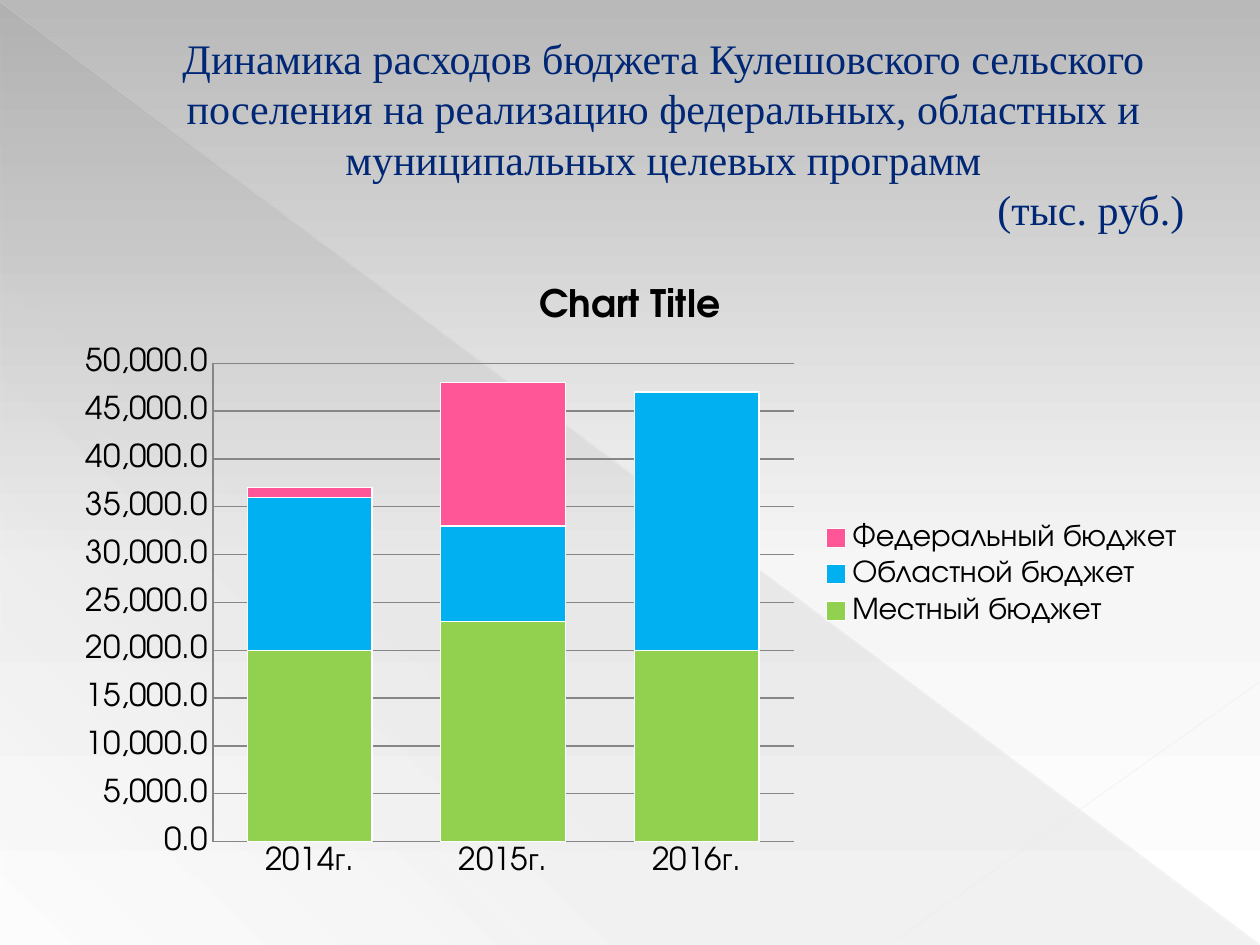
from lxml.etree import SubElement
from pptx import Presentation
from pptx.chart.data import CategoryChartData
from pptx.dml.color import RGBColor
from pptx.enum.chart import XL_CHART_TYPE as ChartType, XL_LEGEND_POSITION as LegendPosition
from pptx.enum.chart import XL_TICK_MARK as TickMark
from pptx.enum.shapes import MSO_CONNECTOR as Connector, MSO_SHAPE as Shape
from pptx.enum.text import MSO_ANCHOR as Anchor, PP_ALIGN as Align
from pptx.oxml.ns import qn
from pptx.util import Cm, Pt

# Content
TITLE = [
    ("Динамика расходов бюджета Кулешовского сельского поселения "
     "на реализацию федеральных, областных и муниципальных целевых программ", Align.CENTER),
    ("(тыс. руб.)", Align.RIGHT),
]
CHART_TITLE = "Chart Title"
YEARS = ["2014г.", "2015г.", "2016г."]
BUDGETS = [
    ("Местный бюджет", (20000, 23000, 20000), RGBColor(0x92, 0xD0, 0x50)),
    ("Областной бюджет", (16000, 10000, 27000), RGBColor(0x00, 0xB0, 0xF0)),
    ("Федеральный бюджет", (1000, 15000, 0), RGBColor(0xFF, 0x56, 0x98)),
]

# Style
NAVY = RGBColor(0x00, 0x27, 0x76)
BLACK = RGBColor(0, 0, 0)
WHITE = RGBColor(0xFF, 0xFF, 0xFF)
GRID_GRAY = RGBColor(0x86, 0x86, 0x86)
TITLE_FONT, CHART_FONT = "Times New Roman", "TeX Gyre Adventor"

# Gradient stops: position %, colour, opacity %
BACKGROUND_STOPS = [(0, "B9B9B9", 100), (60, "F6F6F6", 100), (100, "FFFFFF", 100)]
TRIANGLE_STOPS = [(0, "666666", 10), (70, "666666", 8), (100, "666666", 1)]
# Decorative lines: start, end, colour, width, opacity %
LINES = [
    ((0, 0.03), (25.37, 19.02), RGBColor(0xE8, 0xE8, 0xE8), 0.39, 35),
    ((25.4, 13.74), (17.96, 19.02), RGBColor(0xEA, 0xEA, 0xEA), 0.47, 45),
]


def set_opacity(color, percent):
    SubElement(color, qn("a:alpha"), val=str(percent * 1000))


def set_gradient(fill, owner, stops, angle):
    fill.gradient()
    fill.gradient_angle = 360 - angle
    stop_list = next(owner.iter(qn("a:gsLst")))
    for old_stop in list(stop_list):
        stop_list.remove(old_stop)
    for position, rgb, opacity in stops:
        stop = SubElement(stop_list, qn("a:gs"), pos=str(position * 1000))
        set_opacity(SubElement(stop, qn("a:srgbClr"), val=rgb), opacity)


deck = Presentation()
deck.slide_width, deck.slide_height = Cm(25.4), Cm(19.05)
page = deck.slides.add_slide(deck.slide_layouts[5])

# Background
set_gradient(page.background.fill, page.element, BACKGROUND_STOPS, 90)
triangle = page.shapes.add_shape(Shape.RIGHT_TRIANGLE, Cm(0.02), Cm(0.04), Cm(25.36), Cm(19))
triangle.shadow.inherit = False
triangle.line.fill.background()
set_gradient(triangle.fill, triangle.element, TRIANGLE_STOPS, 133)

for start, end, color, width, opacity in LINES:
    line = page.shapes.add_connector(Connector.STRAIGHT, *map(Cm, start + end))
    line.line.color.rgb = color
    line.line.width = Pt(width)
    set_opacity(next(line.element.iter(qn("a:srgbClr"))), opacity)
    SubElement(line.element.spPr, qn("a:effectLst"))

# Title, brought in front of the background shapes
title = page.shapes.title
title.element.getparent().append(title.element)
title.left, title.top, title.width, title.height = Cm(1.27), Cm(0.74), Cm(22.86), Cm(3.89)
frame = title.text_frame
frame.word_wrap = True
frame.vertical_anchor = Anchor.MIDDLE
frame.text = "\n".join(text for text, _ in TITLE)
for para, (_, alignment) in zip(frame.paragraphs, TITLE):
    para.alignment = alignment
    para.line_spacing = 1.0
    para.space_before = Pt(0)
    para.font.name, para.font.size = TITLE_FONT, Pt(24)
    para.font.color.rgb = NAVY
    para._p.get_or_add_pPr().set("marL", str(Cm(1.35)))

# Chart
data = CategoryChartData(number_format="#,##0.0")
data.categories = YEARS
for name, values, _ in BUDGETS:
    data.add_series(name, values)
chart = page.shapes.add_chart(
    ChartType.COLUMN_STACKED, Cm(1.27), Cm(5.23), Cm(22.86), Cm(12.7), data).chart
chart.font.name, chart.font.size = CHART_FONT, Pt(18)
chart.font.color.rgb = BLACK

chart.has_title = True
chart.chart_title.text_frame.text = CHART_TITLE
heading = chart.chart_title.text_frame.paragraphs[0].font
heading.name, heading.size, heading.bold = CHART_FONT, Pt(21.6), True
heading.color.rgb = BLACK

chart.has_legend = True
chart.legend.position = LegendPosition.RIGHT
chart.legend.include_in_layout = False

plot = chart.plots[0]
plot.gap_width, plot.overlap = 55, 100
plot.vary_by_categories = False
for series, (_, _, color) in zip(plot.series, BUDGETS):
    series.format.fill.solid()
    series.format.fill.fore_color.rgb = color
    series.format.line.color.rgb = WHITE
    series.format.line.width = Pt(0.75)

# Axes
amounts = chart.value_axis
amounts.minimum_scale, amounts.maximum_scale, amounts.major_unit = 0, 50000, 5000
amounts.tick_labels.number_format = "#,##0.0"
amounts.tick_labels.number_format_is_linked = False
for axis in (chart.category_axis, amounts):
    axis.major_tick_mark = axis.minor_tick_mark = TickMark.NONE
for lines in (chart.category_axis.format, amounts.format, amounts.major_gridlines.format):
    lines.line.color.rgb = GRID_GRAY
    lines.line.width = Pt(0.75)

deck.save("out.pptx")
